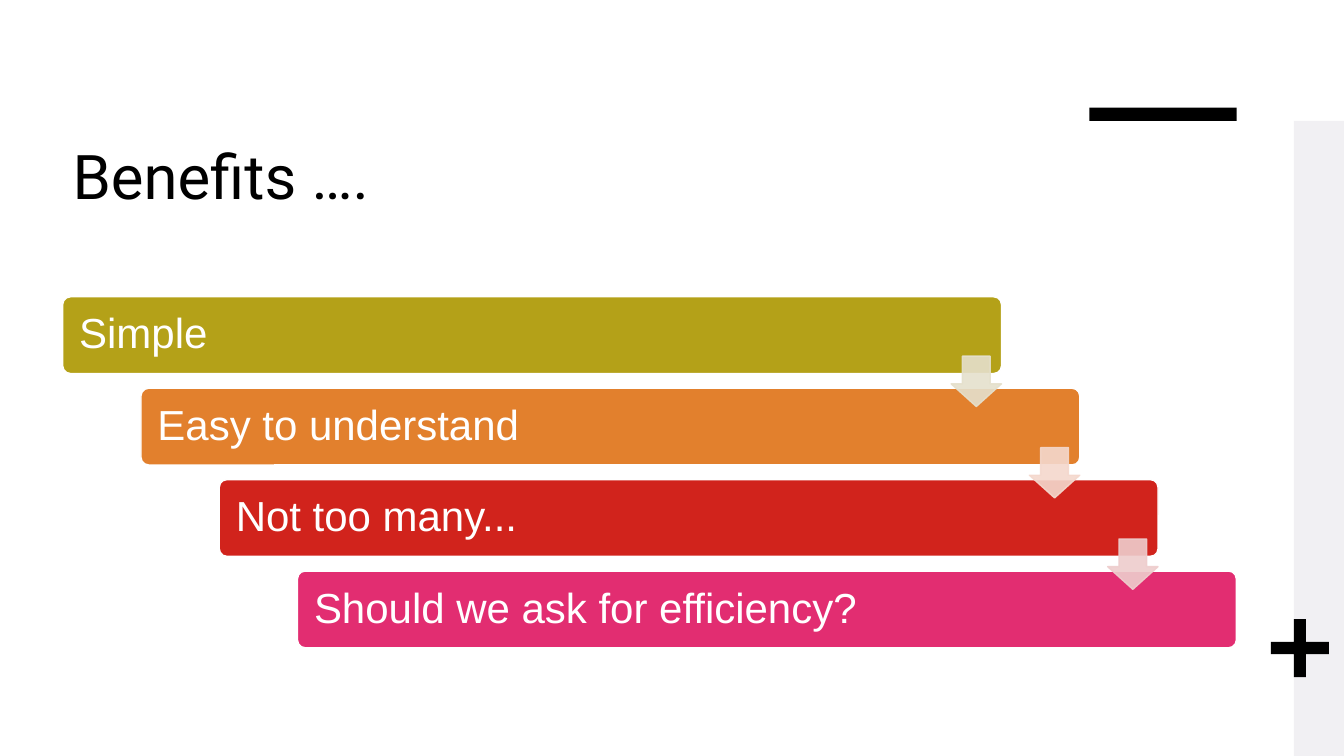
"""Build the Benefits slide: four stepped bars linked by down arrows."""
from dataclasses import dataclass

from lxml import etree
from pptx import Presentation
from pptx.dml.color import RGBColor
from pptx.enum.shapes import MSO_SHAPE
from pptx.enum.text import MSO_ANCHOR, PP_ALIGN
from pptx.oxml.ns import qn
from pptx.util import Pt

RECTANGLE = MSO_SHAPE.RECTANGLE
ROUNDED = MSO_SHAPE.ROUNDED_RECTANGLE
DOWN_ARROW = MSO_SHAPE.DOWN_ARROW
PLUS = MSO_SHAPE.CROSS
TOP, MIDDLE = MSO_ANCHOR.TOP, MSO_ANCHOR.MIDDLE
LEFT = PP_ALIGN.LEFT

TITLE = "Benefits …."
BENEFITS = [
    ("Simple", "B4A118"),
    ("Easy to understand", "E2802D"),
    ("Not too many...", "D1231C"),
    ("Should we ask for efficiency?", "E22D71"),
]
ARROW_COLOURS = ["E5E0CC", "F4D8CD", "EECDCD"]


@dataclass(frozen=True)
class Theme:
    """Colours, fonts and type sizes."""
    black: str = "000000"
    white: str = "FFFFFF"
    panel: str = "F1F0F3"
    title_font: str = "Roboto"
    body_font: str = "Arial"
    title_size: int = 44
    body_size: int = 30


THEME = Theme()
SLIDE_SIZE = (960, 540)
TITLE_BOX = (44.64, 95.04, 650.88, 113.76)
DECORATIONS = [
    (RECTANGLE, (924.3, 86.4, 35.7, 453.6), THEME.panel),
    (RECTANGLE, (778.1, 76.8, 105.2, 9.6), THEME.black),
    (PLUS, (907.8, 442.2, 41.4, 41.4), THEME.black),
]
PLUS_ADJUSTMENT = 0.395
BAR_LEFT, BAR_TOP, BAR_WIDTH, BAR_HEIGHT = 44.8, 212, 670.6, 54.8
STEP_X, STEP_Y = 55.9, 65.3
ARROW_SIZE, ARROW_DROP = 36, 42.4
ARROW_OPACITY = 90
TEXT_INSET, SIDE_INSET = 8.64, 10.2


def add_figure(slide, kind, box, fill, outline=None, adjustments=()):
    """Add a flat preset shape at a box given in points."""
    shape = slide.shapes.add_shape(kind, *map(Pt, box))
    shape.shadow.inherit = False
    shape.fill.solid()
    shape.fill.fore_color.rgb = RGBColor.from_string(fill)
    if outline:
        shape.line.color.rgb = RGBColor.from_string(outline)
        shape.line.width = Pt(1)
    else:
        shape.line.fill.background()
    for index, value in enumerate(adjustments):
        shape.adjustments[index] = value
    return shape


def write_text(shape, text, font, size, colour, anchor):
    """Write one left-aligned paragraph into a shape."""
    frame = shape.text_frame
    frame.word_wrap = True
    frame.vertical_anchor = anchor
    frame.text = text
    para = frame.paragraphs[0]
    para.alignment = LEFT
    para.font.name = font
    para.font.size = Pt(size)
    para.font.color.rgb = RGBColor.from_string(colour)
    return frame


def set_opacity(shape, percent):
    """Give the fill and outline of a shape the same opacity."""
    for colour in shape.element.iter(qn("a:srgbClr")):
        etree.SubElement(colour, qn("a:alpha"), val=str(percent * 1000))


def add_title(slide):
    """Place and format the title placeholder."""
    title = slide.shapes.title
    title.left, title.top, title.width, title.height = map(Pt, TITLE_BOX)
    write_text(title, TITLE, THEME.title_font, THEME.title_size, THEME.black, TOP)


def add_bar(slide, row, text, colour):
    """Add one benefit bar, shifted right and down by its row."""
    box = (BAR_LEFT + row * STEP_X, BAR_TOP + row * STEP_Y, BAR_WIDTH, BAR_HEIGHT)
    bar = add_figure(slide, ROUNDED, box, colour, THEME.white, [0.1])
    frame = write_text(bar, text, THEME.body_font, THEME.body_size, THEME.white, MIDDLE)
    frame.margin_left = frame.margin_right = Pt(SIDE_INSET)
    frame.margin_top = frame.margin_bottom = Pt(TEXT_INSET)
    frame.paragraphs[0].line_spacing = 0.9


def add_arrow(slide, row, colour):
    """Add the arrow leading from one bar to the next."""
    left = BAR_LEFT + BAR_WIDTH - ARROW_SIZE + row * STEP_X
    top = BAR_TOP + ARROW_DROP + row * STEP_Y
    box = (left, top, ARROW_SIZE, ARROW_SIZE)
    arrow = add_figure(slide, DOWN_ARROW, box, colour, colour, [0.55, 0.45])
    set_opacity(arrow, ARROW_OPACITY)


def main():
    """Build and save the deck."""
    deck = Presentation()
    deck.slide_width, deck.slide_height = map(Pt, SLIDE_SIZE)
    page = deck.slides.add_slide(deck.slide_layouts[5])
    add_title(page)
    for kind, box, colour in DECORATIONS:
        adjustments = [PLUS_ADJUSTMENT] if kind == PLUS else []
        add_figure(page, kind, box, colour, adjustments=adjustments)
    for row, (text, colour) in enumerate(BENEFITS):
        add_bar(page, row, text, colour)
    for row, colour in enumerate(ARROW_COLOURS):
        add_arrow(page, row, colour)
    deck.save("out.pptx")


if __name__ == "__main__":
    main()
